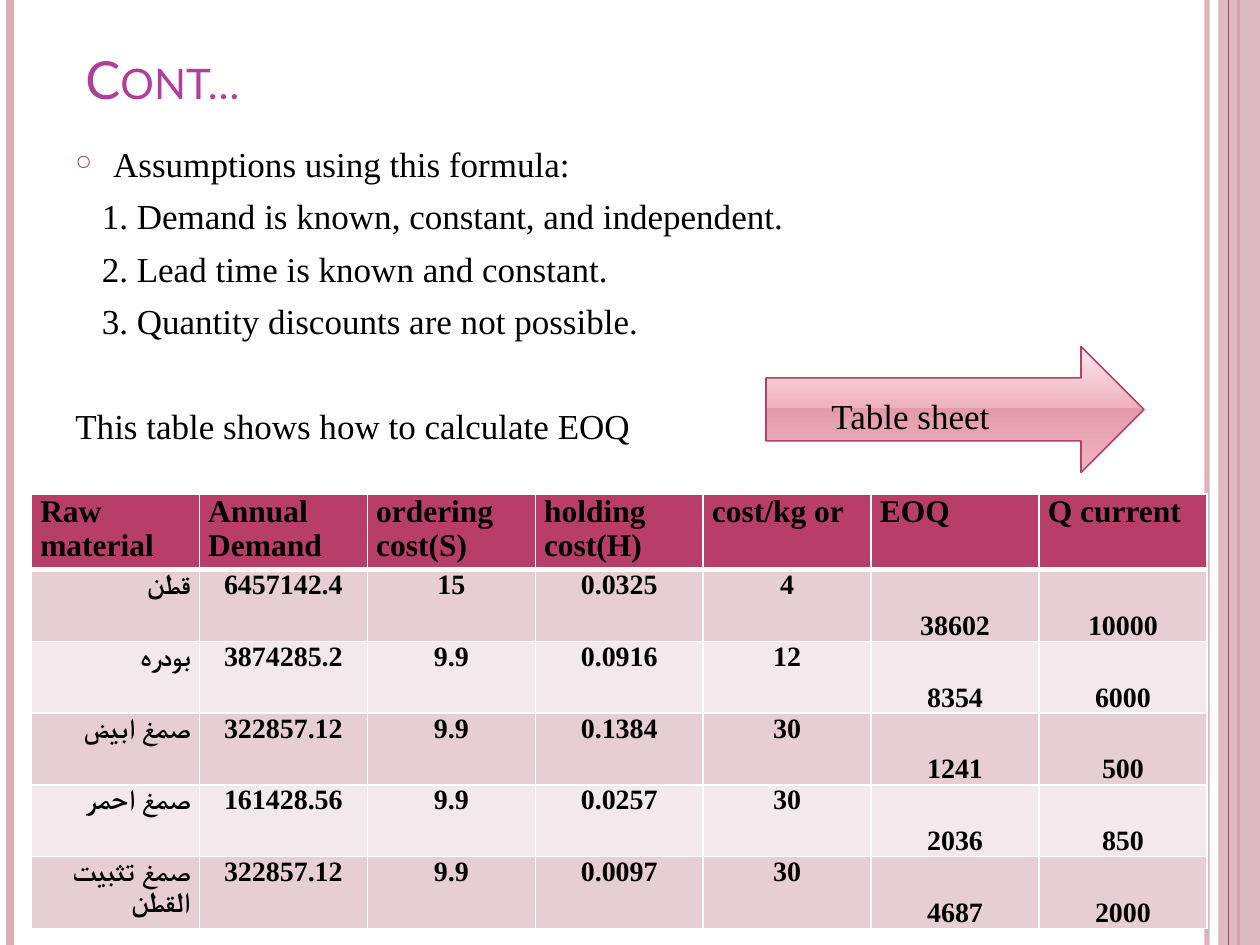
from dataclasses import dataclass

from lxml import etree
from pptx import Presentation
from pptx.dml.color import RGBColor
from pptx.enum.shapes import MSO_CONNECTOR, MSO_SHAPE
from pptx.enum.text import MSO_ANCHOR, PP_ALIGN
from pptx.oxml import parse_xml
from pptx.oxml.ns import nsdecls, qn
from pptx.util import Inches, Pt

STRAIGHT = MSO_CONNECTOR.STRAIGHT
RECT, ARROW = MSO_SHAPE.RECTANGLE, MSO_SHAPE.RIGHT_ARROW
TOP, BOTTOM = MSO_ANCHOR.TOP, MSO_ANCHOR.BOTTOM
LEFT, CENTER, RIGHT = PP_ALIGN.LEFT, PP_ALIGN.CENTER, PP_ALIGN.RIGHT


@dataclass(frozen=True)
class Theme:
    accent: str = "B83D68"
    pale: str = "D8AFB9"
    title: str = "B13F9A"
    text: str = "000000"
    border: str = "FFFFFF"
    bands: tuple = ("E6CED4", "F3E8EB")
    gradient: tuple = ((0, "FCE8ED"), (49, "EFB0BE"), (49, "E39BAC"),
                       (92, "EFB0BE"), (100, "F0BEC9"))
    title_font: str = "Lato"
    body_font: str = "Times New Roman"
    title_size: int = 30
    body_size: int = 20
    header_size: int = 18
    cell_size: int = 16


def set_alpha(fill, percent):
    """Make every colour below an XML element partly transparent."""
    for clr in fill.iter(qn("a:srgbClr")):
        etree.SubElement(clr, qn("a:alpha")).set("val", str(percent * 1000))


class SlideBuilder:
    def __init__(self, slide, theme):
        self.s, self.theme = slide, theme

    def style(self, p, size, color=None, font=None, bold=None):
        for r in p.runs:
            r.font.size = Pt(size)
            r.font.name = font or self.theme.body_font
            r.font.bold = bold
            r.font.color.rgb = RGBColor.from_string(color or self.theme.text)

    def vertical_line(self, x, color, width, alpha=None):
        line = self.s.shapes.add_connector(
            STRAIGHT, Inches(x), 0, Inches(x), Inches(7.5))
        line.line.color.rgb = RGBColor.from_string(color)
        line.line.width = Pt(width)
        sp_pr = line._element.spPr
        if alpha:
            set_alpha(sp_pr, alpha)
        etree.SubElement(sp_pr, qn("a:effectLst"))

    def band(self, x, y, w, h, color, alpha):
        sp = self.s.shapes.add_shape(RECT, *map(Inches, (x, y, w, h)))
        sp.shadow.inherit = False
        sp.fill.solid()
        sp.fill.fore_color.rgb = RGBColor.from_string(color)
        sp.line.fill.background()
        set_alpha(sp._element.spPr, alpha)

    def text(self, x, y, w, h, lines, anchor=TOP):
        box = self.s.shapes.add_textbox(*map(Inches, (x, y, w, h)))
        tf = box.text_frame
        tf.word_wrap = True
        tf.vertical_anchor = anchor
        tf.text = "\n".join(lines)
        for p in tf.paragraphs:
            self.style(p, self.theme.body_size)
        return tf.paragraphs

    def title(self, x, y, w, h, text):
        p, = self.text(x, y, w, h, [text], BOTTOM)
        self.style(p, self.theme.title_size, self.theme.title, self.theme.title_font)
        p.runs[0].font._element.set("cap", "small")

    def body(self, x, y, w, h, bullet, steps, closing):
        paragraphs = self.text(x, y, w, h, [bullet, *steps, closing])
        first, *middle, last = paragraphs
        p_pr = first._p.get_or_add_pPr()
        p_pr.set("marL", str(Inches(0.3)))
        p_pr.set("indent", str(Inches(-0.3)))
        for xml in (f'<a:buClr {nsdecls("a")}><a:srgbClr val="{self.theme.accent}"/></a:buClr>',
                    f'<a:buSzPct {nsdecls("a")} val="60000"/>',
                    f'<a:buChar {nsdecls("a")} char="○"/>'):
            p_pr.append(parse_xml(xml))
        for p in middle:
            p._p.get_or_add_pPr().set("marL", str(Inches(0.21)))
            p.space_before = Pt(6)
        last.space_before = Pt(36)

    def arrow(self, x, y, w, h):
        t = self.theme
        sp = self.s.shapes.add_shape(ARROW, *map(Inches, (x, y, w, h)))
        sp.shadow.inherit = False
        sp.line.color.rgb = RGBColor.from_string(t.accent)
        sp.line.width = Pt(0.9)
        stops = "".join(f'<a:gs pos="{pos * 1000}"><a:srgbClr val="{color}"/></a:gs>'
                        for pos, color in t.gradient)
        sp._element.spPr.find(qn("a:prstGeom")).addnext(parse_xml(
            f'<a:gradFill {nsdecls("a")}><a:gsLst>{stops}</a:gsLst>'
            '<a:lin ang="5400000" scaled="0"/></a:gradFill>'))

    def borders(self, cell, bottom):
        tc_pr = cell._tc.get_or_add_tcPr()
        sides = (("lnL", 1), ("lnR", 1), ("lnT", 1), ("lnB", bottom))
        for i, (side, width) in enumerate(sides):
            tc_pr.insert(i, parse_xml(
                f'<a:{side} {nsdecls("a")} w="{Pt(width)}"><a:solidFill>'
                f'<a:srgbClr val="{self.theme.border}"/></a:solidFill></a:{side}>'))

    def table(self, x, y, w, h, rows):
        t = self.theme
        table = self.s.shapes.add_table(
            len(rows), len(rows[0]), *map(Inches, (x, y, w, h))).table
        for i, row in enumerate(rows):
            header = i == 0
            fill = t.accent if header else t.bands[(i - 1) % 2]
            for j, value in enumerate(row):
                cell = table.cell(i, j)
                cell.margin_left = cell.margin_right = Inches(0.07)
                cell.margin_top = cell.margin_bottom = 0
                cell.fill.solid()
                cell.fill.fore_color.rgb = RGBColor.from_string(fill)
                self.borders(cell, 3 if header else 1)
                cell.vertical_anchor = BOTTOM if j >= 5 and not header else TOP
                cell.text = value
                p = cell.text_frame.paragraphs[0]
                self.style(p, t.header_size if header else t.cell_size, bold=True)
                p.alignment = LEFT if header else CENTER if j else RIGHT
                if not header and j == 0:
                    p._p.get_or_add_pPr().set("rtl", "1")
                    cs = etree.SubElement(p.runs[0].font._element, qn("a:cs"))
                    cs.set("typeface", t.body_font)


MATERIALS = [
    ("Raw material", "Annual Demand", "ordering cost(S)", "holding cost(H)",
     "cost/kg or", "EOQ", "Q current"),
    ("قطن", "6457142.4", "15", "0.0325", "4", "38602", "10000"),
    ("بودره", "3874285.2", "9.9", "0.0916", "12", "8354", "6000"),
    ("صمغ ابيض", "322857.12", "9.9", "0.1384", "30", "1241", "500"),
    ("صمغ احمر", "161428.56", "9.9", "0.0257", "30", "2036", "850"),
    ("صمغ تثبيت القطن", "322857.12", "9.9", "0.0097", "30", "4687", "2000"),
]


def main():
    prs = Presentation()
    prs.slide_width, prs.slide_height = Inches(10), Inches(7.5)
    theme = Theme()
    b = SlideBuilder(prs.slides.add_slide(prs.slide_layouts[6]), theme)

    # Side stripes
    b.vertical_line(9.58, theme.pale, 3, alpha=93)
    b.vertical_line(0.08, theme.pale, 4.5)
    b.vertical_line(9.83, theme.accent, 1.5)
    b.band(9.67, 0, 0.33, 7.5, theme.pale, alpha=87)
    b.vertical_line(9.75, theme.accent, 0.75)

    # Title and assumptions
    b.title(0.58, -0.33, 8.17, 1.25, "Cont…")
    b.body(0.5, 1.08, 8.17, 5.33, "Assumptions using this formula:",
           ["1. Demand is known, constant, and independent.",
            "2. Lead time is known and constant.",
            "3. Quantity discounts are not possible."],
           "This table shows how to calculate EOQ")

    # Order quantity table
    b.table(0.25, 3.92, 9.33, 3.42, MATERIALS)

    # Arrow to the sheet
    b.arrow(6.08, 2.75, 3, 1)
    b.text(6.5, 3.08, 1.92, 0.44, ["Table sheet"])

    prs.save("out.pptx")


if __name__ == "__main__":
    main()
